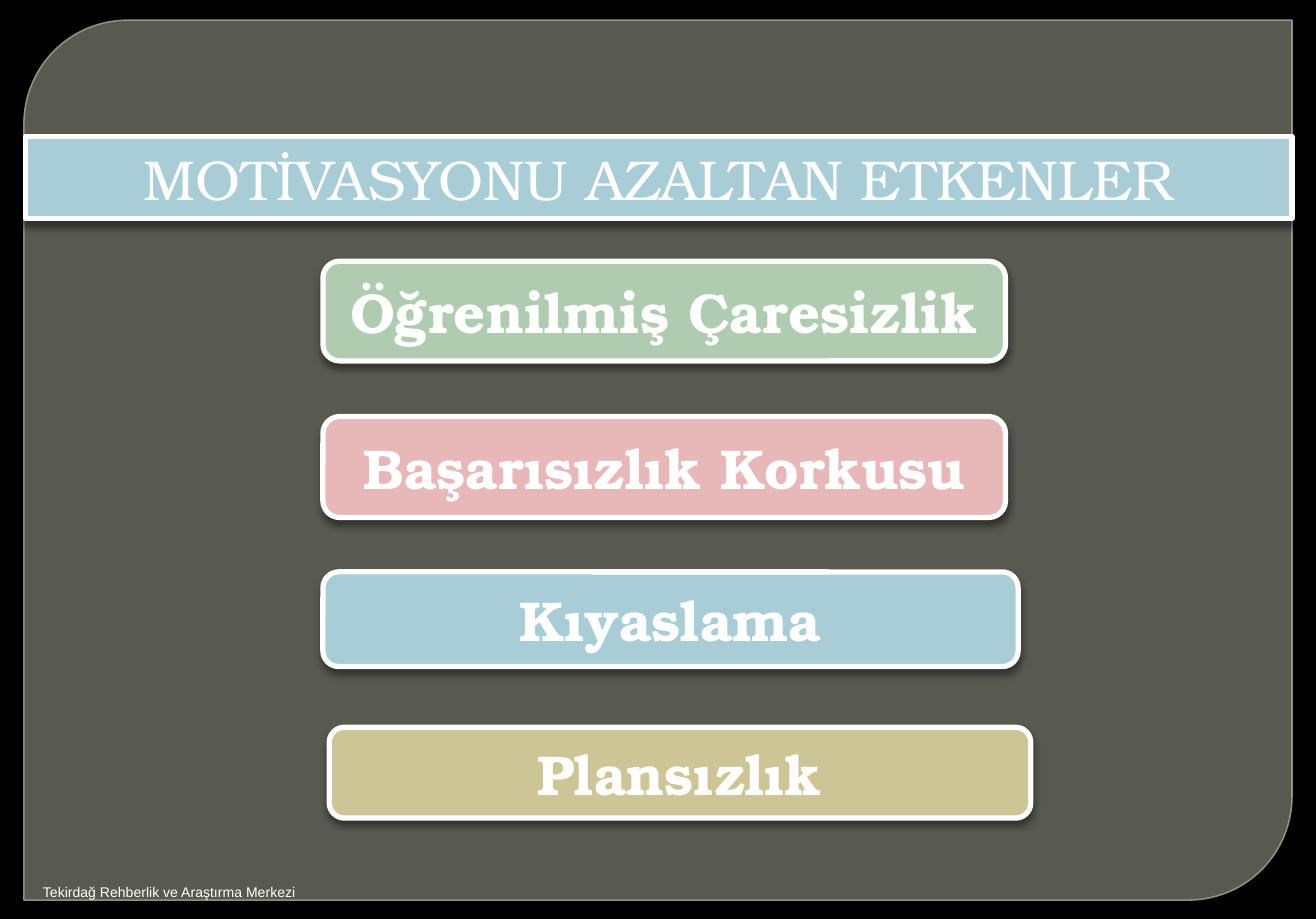
from lxml.etree import SubElement
from pptx import Presentation
from pptx.dml.color import RGBColor
from pptx.enum.shapes import MSO_SHAPE
from pptx.enum.text import MSO_ANCHOR, MSO_AUTO_SIZE, PP_ALIGN
from pptx.oxml.ns import qn
from pptx.util import Inches, Pt

BLACK = RGBColor(0x00, 0x00, 0x00)
WHITE = RGBColor(0xFF, 0xFF, 0xFF)
OLIVE = RGBColor(0x88, 0x8B, 0x7B)
OLIVE_EDGE = RGBColor(0x9D, 0xA0, 0x90)
BLUE = RGBColor(0xA8, 0xCD, 0xD7)
GREEN = RGBColor(0xB0, 0xCC, 0xB0)
PINK = RGBColor(0xE8, 0xB7, 0xB7)
SAND = RGBColor(0xCE, 0xC5, 0x97)

FACTOR_TOP = 28.43
FACTOR_STEP = 16.9
FACTORS = [
    ("Öğrenilmiş Çaresizlik", GREEN, 24.54, 51.87, 10.85),
    ("Başarısızlık Korkusu", PINK, 24.54, 51.87, 10.99),
    ("Kıyaslama", BLUE, 24.54, 52.83, 10.3),
    ("Plansızlık", SAND, 25.02, 53.31, 9.89),
]


class FactorSlide:
    heading_font = "TeX Gyre Bonum"
    footer_font = "Arial"

    def __init__(self, deck):
        self.deck = deck
        self.page = deck.slides.add_slide(deck.slide_layouts[5])
        background = self.page.background.fill
        background.solid()
        background.fore_color.rgb = BLACK

    def place(self, left, top, width, height):
        column = self.deck.slide_width / 100
        row = self.deck.slide_height / 100
        return [round(length) for length in
                (left * column, top * row, width * column, height * row)]

    def paint(self, shape, fill, line, weight):
        shape.fill.solid()
        shape.fill.fore_color.rgb = fill
        shape.line.color.rgb = line
        shape.line.width = Pt(weight)

    def fade(self, properties, percent):
        color = properties.find(qn("a:solidFill"))[0]
        SubElement(color, qn("a:alpha"), val=str(percent * 1000))

    def drop_shadow(self, shape):
        shape.shadow.inherit = False
        effects = shape.element.spPr.find(qn("a:effectLst"))
        shadow = SubElement(effects, qn("a:outerShdw"), blurRad=str(Pt(4)),
                            dist=str(Pt(3)), dir="5400000", rotWithShape="0")
        color = SubElement(shadow, qn("a:srgbClr"), val=str(BLACK))
        SubElement(color, qn("a:alpha"), val="43000")

    def set_text(self, shape, text, font, size, bold, align, anchor, insets):
        frame = shape.text_frame
        frame.text = text
        frame.word_wrap = True
        frame.auto_size = MSO_AUTO_SIZE.NONE
        frame.vertical_anchor = anchor
        frame.margin_left = frame.margin_right = Inches(insets[0])
        frame.margin_top = frame.margin_bottom = Inches(insets[1])
        para = frame.paragraphs[0]
        para.alignment = align
        span = para.runs[0]
        span.font.name = font
        span.font.size = Pt(size)
        span.font.bold = bold
        span.font.color.rgb = WHITE

    def card(self, shape, text, fill, bold, anchor):
        self.paint(shape, fill, WHITE, 3)
        self.drop_shadow(shape)
        self.set_text(shape, text, self.heading_font, 32, bold,
                      PP_ALIGN.CENTER, anchor, (0.11, 0.06))

    def panel(self, *area):
        shape = self.page.shapes.add_shape(
            MSO_SHAPE.ROUND_2_DIAG_RECTANGLE, *self.place(*area))
        shape.adjustments[0] = 0.118
        shape.adjustments[1] = 0
        shape.shadow.inherit = False
        self.paint(shape, OLIVE, OLIVE_EDGE, 0.87)
        self.fade(shape.element.spPr, 65)
        self.fade(shape.element.spPr.find(qn("a:ln")), 88)
        self.page.shapes.title.element.addprevious(shape.element)

    def title(self, text, *area):
        shape = self.page.shapes.title
        shape.left, shape.top, shape.width, shape.height = self.place(*area)
        self.card(shape, text, BLUE, False, MSO_ANCHOR.TOP)

    def factor(self, text, fill, *area):
        shape = self.page.shapes.add_shape(
            MSO_SHAPE.ROUNDED_RECTANGLE, *self.place(*area))
        self.card(shape, text, fill, True, MSO_ANCHOR.MIDDLE)

    def footer(self, text, *area):
        box = self.page.shapes.add_textbox(*self.place(*area))
        self.set_text(box, text, self.footer_font, 8, False,
                      PP_ALIGN.LEFT, MSO_ANCHOR.TOP, (0, 0))


def main():
    deck = Presentation()
    deck.slide_width = Inches(10.43)
    deck.slide_height = Inches(7.28)
    slide = FactorSlide(deck)
    slide.panel(1.82, 2.2, 96.36, 95.74)
    slide.title("MOTİVASYONU AZALTAN ETKENLER", 1.92, 14.84, 96.26, 8.93)
    for index, (text, fill, left, width, height) in enumerate(FACTORS):
        top = FACTOR_TOP + index * FACTOR_STEP
        slide.factor(text, fill, left, top, width, height)
    slide.footer("Tekirdağ Rehberlik ve Araştırma Merkezi",
                 3.26, 96.15, 37.78, 3.3)
    deck.save("out.pptx")


if __name__ == "__main__":
    main()
